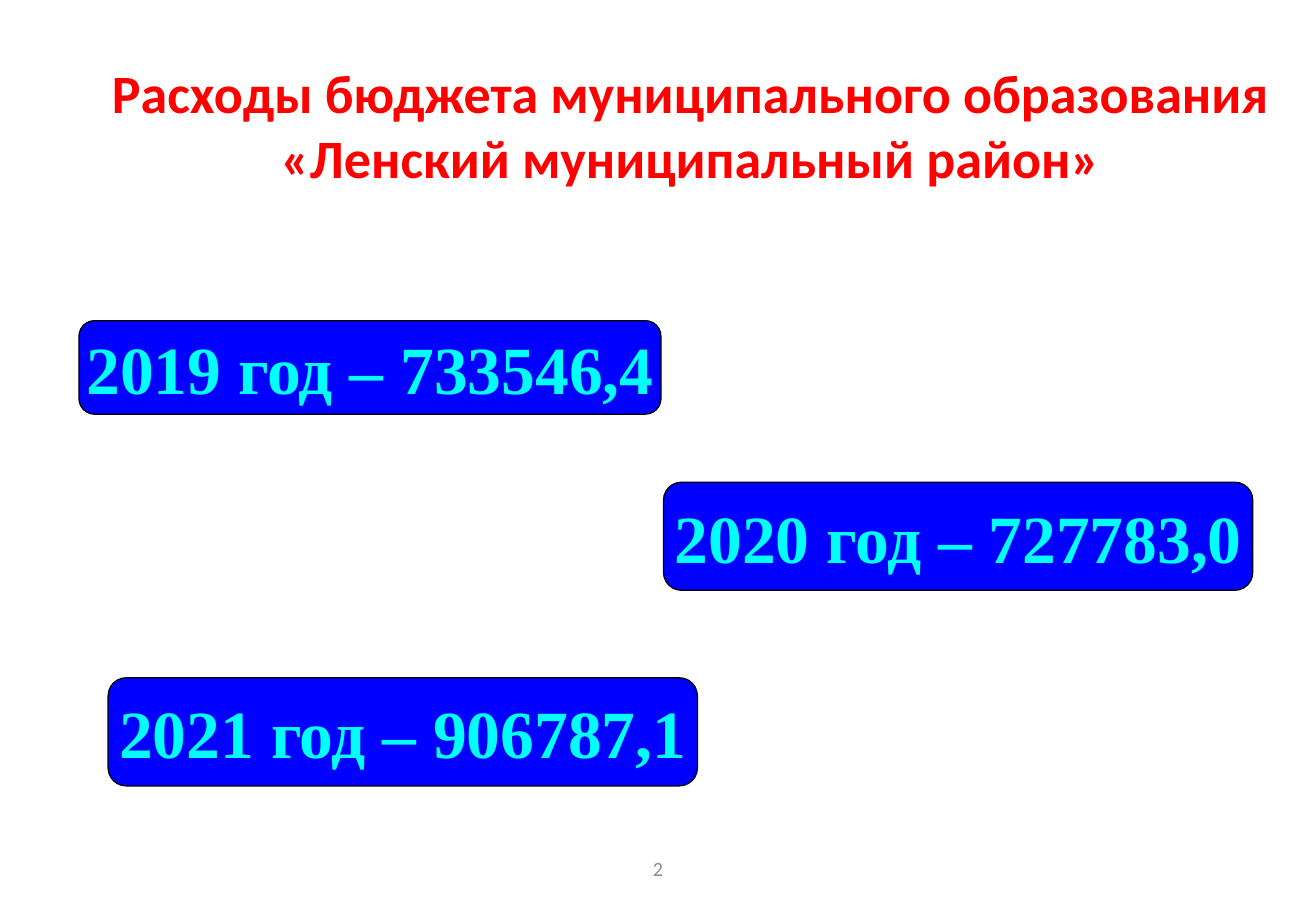
from pptx import Presentation
from pptx.dml.color import RGBColor
from pptx.enum.shapes import MSO_SHAPE as Shape
from pptx.enum.text import MSO_ANCHOR as Anchor, PP_ALIGN as Align
from pptx.util import Inches, Pt

presentation = Presentation()
presentation.slide_width = Inches(10.83)
presentation.slide_height = Inches(7.5)
slide = presentation.slides.add_slide(presentation.slide_layouts[6])


def color(target, hex_value):
    target.rgb = RGBColor.from_string(hex_value)


def add_text(text, left, top, width, height, *, size, font_color,
             font="Calibri", bold=False, fill=None, wrap=True):
    """Place centred text at percentages of the slide, in a rounded box if fill is given."""
    box = [round(share / 100 * length) for share, length in zip(
        (left, top, width, height),
        (presentation.slide_width, presentation.slide_height) * 2)]
    if fill:
        shape = slide.shapes.add_shape(Shape.ROUNDED_RECTANGLE, *box)
        shape.shadow.inherit = False
        shape.fill.solid()
        color(shape.fill.fore_color, fill)
        color(shape.line.color, "000000")
        shape.line.width = Pt(0.75)
    else:
        shape = slide.shapes.add_textbox(*box)
    frame = shape.text_frame
    frame.word_wrap = wrap
    frame.vertical_anchor = Anchor.MIDDLE
    paragraph = frame.paragraphs[0]
    paragraph.alignment = Align.CENTER
    run = paragraph.add_run()
    run.text = text
    run.font.name = font
    run.font.size = Pt(size)
    run.font.bold = bold
    color(run.font.color, font_color)


add_text("Расходы бюджета муниципального образования «Ленский муниципальный район»",
         5, 7.6, 95, 12.13, size=32, font_color="FF0000", bold=True)

yearly_expenses = [
    ("2019 год – 733546,4", 6, 35.2, 44.23, 10.27),
    ("2020 год – 727783,0", 50.42, 52.93, 44.78, 11.87),
    ("2021 год – 906787,1", 8.22, 74.4, 44.78, 11.87),
]
for expense in yearly_expenses:
    add_text(*expense, size=40, font_color="00FFFF", font="Times New Roman",
             bold=True, fill="0000FF", wrap=False)

add_text("2", 34.16, 92.67, 31.67, 5.33, size=12, font_color="8C8C8C")

presentation.save("out.pptx")
